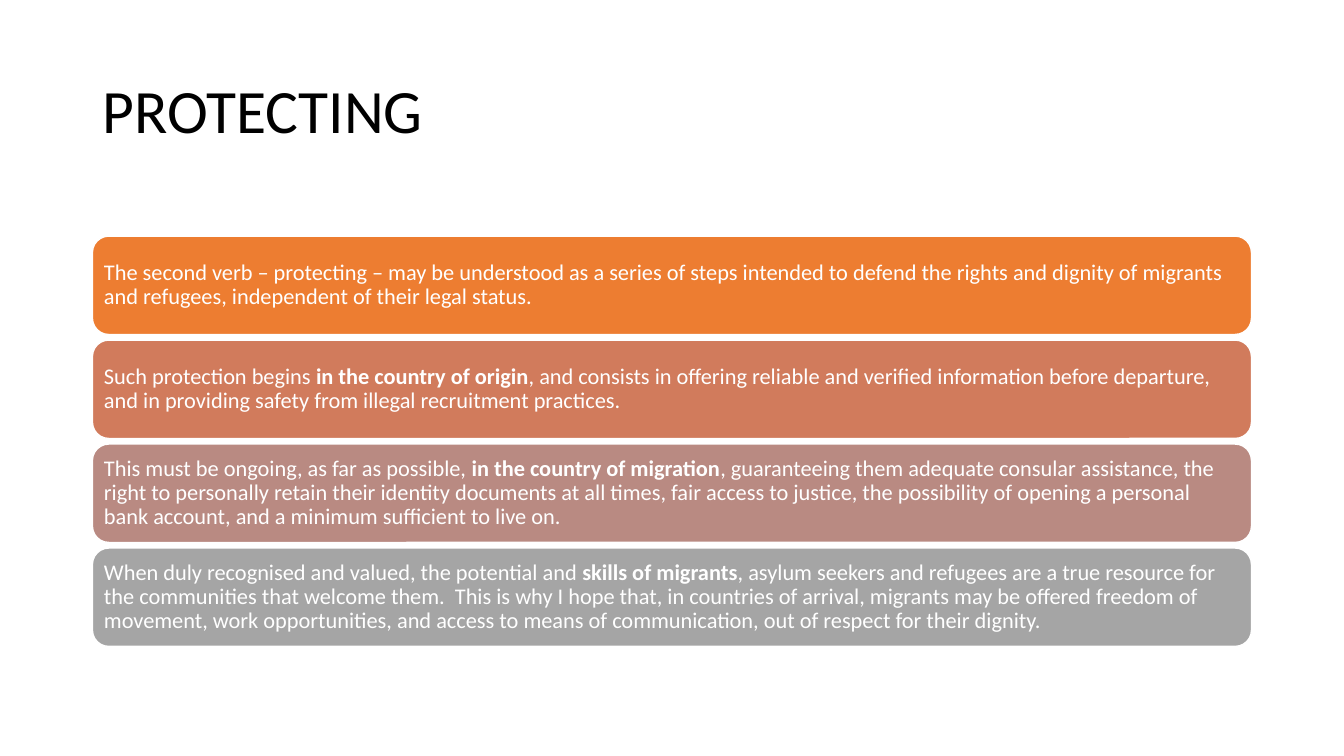
from dataclasses import dataclass

from pptx import Presentation
from pptx import util as u
from pptx.dml import color
from pptx.enum import shapes, text

LEFT, WIDE = 2.33, 29.21
TOP, HIGH, STEP = 5.95, 2.48, 2.62  # first bar, bar height, bar pitch


@dataclass
class Bar:
    fill: str
    start: str
    bold: str = ""
    rest: str = ""


BARS = [
    Bar("ED7D31",
        "The second verb – protecting – may be understood as a series of steps "
        "intended to defend the rights and dignity of migrants and refugees, "
        "independent of their legal status."),
    Bar("D17B5C", "Such protection begins ", "in the country of origin",
        ", and consists in offering reliable and verified information before "
        "departure, and in providing safety from illegal recruitment practices."),
    Bar("B98A82", "This must be ongoing, as far as possible, ",
        "in the country of migration",
        ", guaranteeing them adequate consular assistance, the right to "
        "personally retain their identity documents at all times, fair access "
        "to justice, the possibility of opening a personal bank account, and a "
        "minimum sufficient to live on."),
    Bar("A5A5A5", "When duly recognised and valued, the potential and ",
        "skills of migrants",
        ", asylum seekers and refugees are a true resource for the communities "
        "that welcome them.  This is why I hope that, in countries of arrival, "
        "migrants may be offered freedom of movement, work opportunities, and "
        "access to means of communication, out of respect for their dignity."),
]


def rgb(code: str) -> color.RGBColor:
    return color.RGBColor.from_string(code)


def apply(item: object, form: dict) -> None:
    for name, value in form.items():
        setattr(item, name, value)


def write(shape, parts: list[tuple[str, bool]], size: int, ink: str,
          inset: dict) -> None:
    frame = shape.text_frame
    apply(frame, {"word_wrap": True,
                  "vertical_anchor": text.MSO_ANCHOR.MIDDLE, **inset})
    para = frame.paragraphs[0]
    apply(para, {"alignment": text.PP_ALIGN.LEFT, "line_spacing": 0.9})
    for words, bold in parts:
        run = para.add_run()
        run.text = words
        apply(run.font, {"name": "Calibri", "size": u.Pt(size), "bold": bold})
        run.font.color.rgb = rgb(ink)


def draw(slide, bar: Bar, row: int) -> None:
    shape = slide.shapes.add_shape(
        shapes.MSO_SHAPE.ROUNDED_RECTANGLE, u.Cm(LEFT),
        u.Cm(TOP + row * STEP), u.Cm(WIDE), u.Cm(HIGH))
    shape.shadow.inherit = False
    shape.fill.solid()
    shape.fill.fore_color.rgb = rgb(bar.fill)
    shape.line.color.rgb = rgb("FFFFFF")
    shape.line.width = u.Pt(1)
    parts = [(bar.start, False), (bar.bold, True), (bar.rest, False)]
    inset = {f"margin_{side}": u.Cm(0.17)
             for side in ("left", "top", "right", "bottom")}
    write(shape, [part for part in parts if part[0]], 16, "FFFFFF", inset)


def main() -> None:
    deck = Presentation()
    apply(deck, {"slide_width": u.Cm(33.87), "slide_height": u.Cm(19.05)})
    slide = deck.slides.add_slide(deck.slide_layouts[6])

    # Title
    title = slide.shapes.add_textbox(u.Cm(LEFT), u.Cm(1.01), u.Cm(WIDE), u.Cm(3.68))
    write(title, [("PROTECTING", False)], 44, "000000", {})

    # Stacked bars
    for row, bar in enumerate(BARS):
        draw(slide, bar, row)

    deck.save("out.pptx")


if __name__ == "__main__":
    main()
